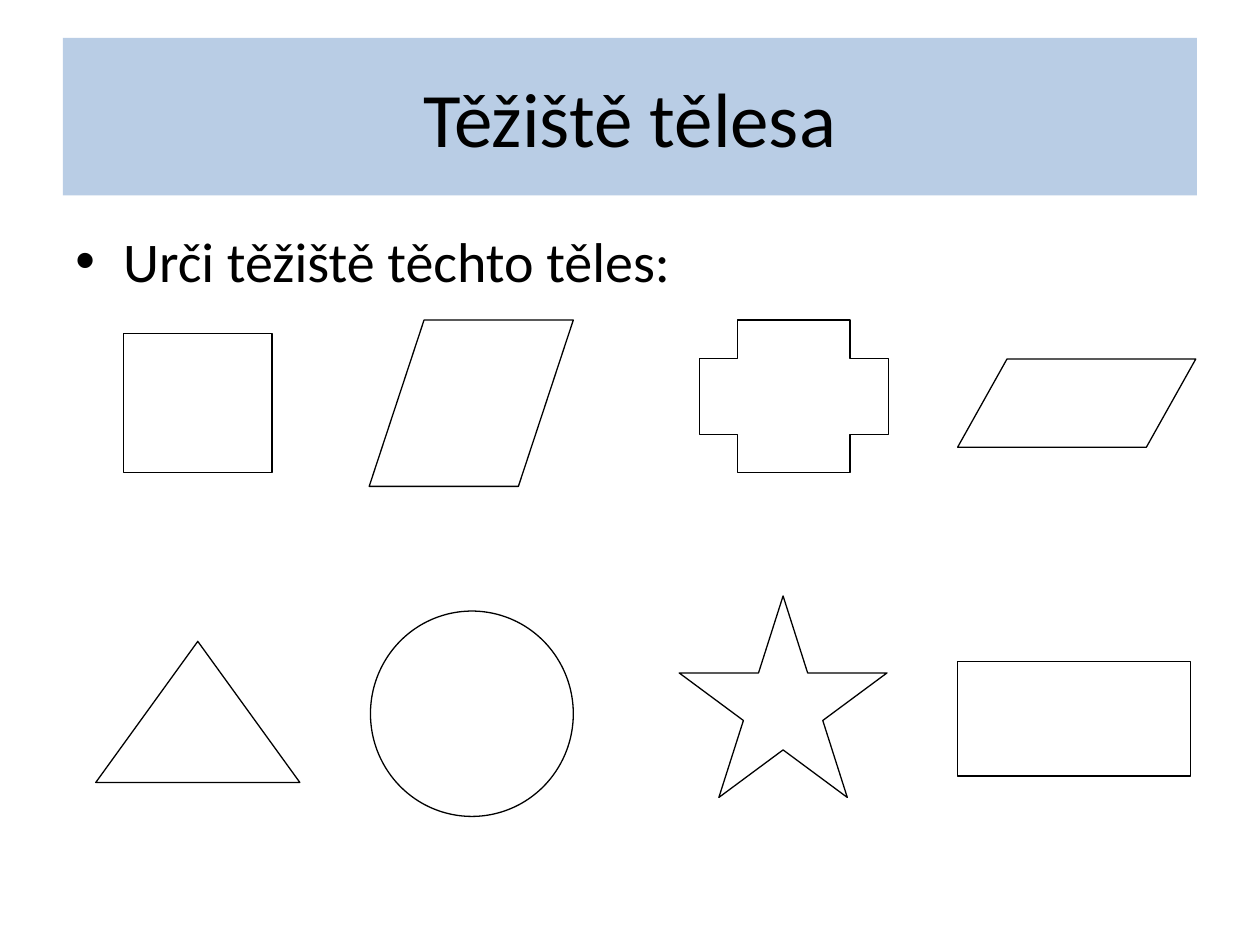
from dataclasses import dataclass

from lxml.etree import SubElement
from pptx import Presentation
from pptx.dml.color import RGBColor
from pptx.enum.shapes import MSO_SHAPE as Preset
from pptx.enum.text import MSO_ANCHOR as Anchor, PP_ALIGN as Align
from pptx.oxml.ns import qn
from pptx.util import Inches, Pt

BLACK = "000000"
WHITE = "FFFFFF"
TITLE_BLUE = "B9CDE5"
FONT = "Calibri"


@dataclass
class Figure:
    preset: Preset
    left: float
    top: float
    width: float
    height: float
    adjustment: float | None = None


FIGURES = [
    Figure(Preset.RECTANGLE, 0.98, 2.65, 1.18, 1.1),
    Figure(Preset.PARALLELOGRAM, 2.93, 2.54, 1.62, 1.32, 0.33),
    Figure(Preset.CROSS, 5.55, 2.54, 1.5, 1.21, 0.25),
    Figure(Preset.ISOSCELES_TRIANGLE, 0.76, 5.09, 1.62, 1.12, 0.5),
    Figure(Preset.OVAL, 2.94, 4.85, 1.61, 1.63),
    Figure(Preset.STAR_5_POINT, 5.39, 4.73, 1.65, 1.6),
    Figure(Preset.PARALLELOGRAM, 7.6, 2.85, 1.89, 0.7, 0.56),
    Figure(Preset.RECTANGLE, 7.6, 5.25, 1.85, 0.91),
]


def color(value: str) -> RGBColor:
    return RGBColor.from_string(value)


def write_text(box, text: str, size: int):
    frame = box.text_frame
    frame.text = text
    frame.word_wrap = True
    para = frame.paragraphs[0]
    font = para.runs[0].font
    font.name = FONT
    font.size = Pt(size)
    font.color.rgb = color(BLACK)
    return para


def add_bullet(para) -> None:
    properties = para._p.get_or_add_pPr()
    properties.set("marL", str(Inches(0.38)))
    properties.set("indent", str(Inches(-0.38)))
    SubElement(properties, qn("a:buFont")).set("typeface", "Arial")
    SubElement(properties, qn("a:buChar")).set("char", "•")


def draw_figure(page, figure: Figure, fill: str = WHITE, line: str | None = BLACK):
    shape = page.shapes.add_shape(
        figure.preset,
        Inches(figure.left),
        Inches(figure.top),
        Inches(figure.width),
        Inches(figure.height),
    )
    shape.shadow.inherit = False
    shape.fill.solid()
    shape.fill.fore_color.rgb = color(fill)
    if line is None:
        shape.line.fill.background()
    else:
        shape.line.color.rgb = color(line)
        shape.line.width = Pt(0.75)
    if figure.adjustment is not None:
        shape.adjustments[0] = figure.adjustment
    return shape


def main() -> None:
    deck = Presentation()
    deck.slide_width = Inches(10)
    deck.slide_height = Inches(7.5)
    page = deck.slides.add_slide(deck.slide_layouts[6])

    task = page.shapes.add_textbox(Inches(0.5), Inches(1.75), Inches(9), Inches(4.95))
    add_bullet(write_text(task, "Urči těžiště těchto těles:", 32))

    banner = Figure(Preset.RECTANGLE, 0.5, 0.3, 9, 1.25)
    title = draw_figure(page, banner, TITLE_BLUE, None)
    title.text_frame.vertical_anchor = Anchor.MIDDLE
    write_text(title, "Těžiště tělesa", 44).alignment = Align.CENTER

    for figure in FIGURES:
        draw_figure(page, figure)

    deck.save("out.pptx")


if __name__ == "__main__":
    main()
